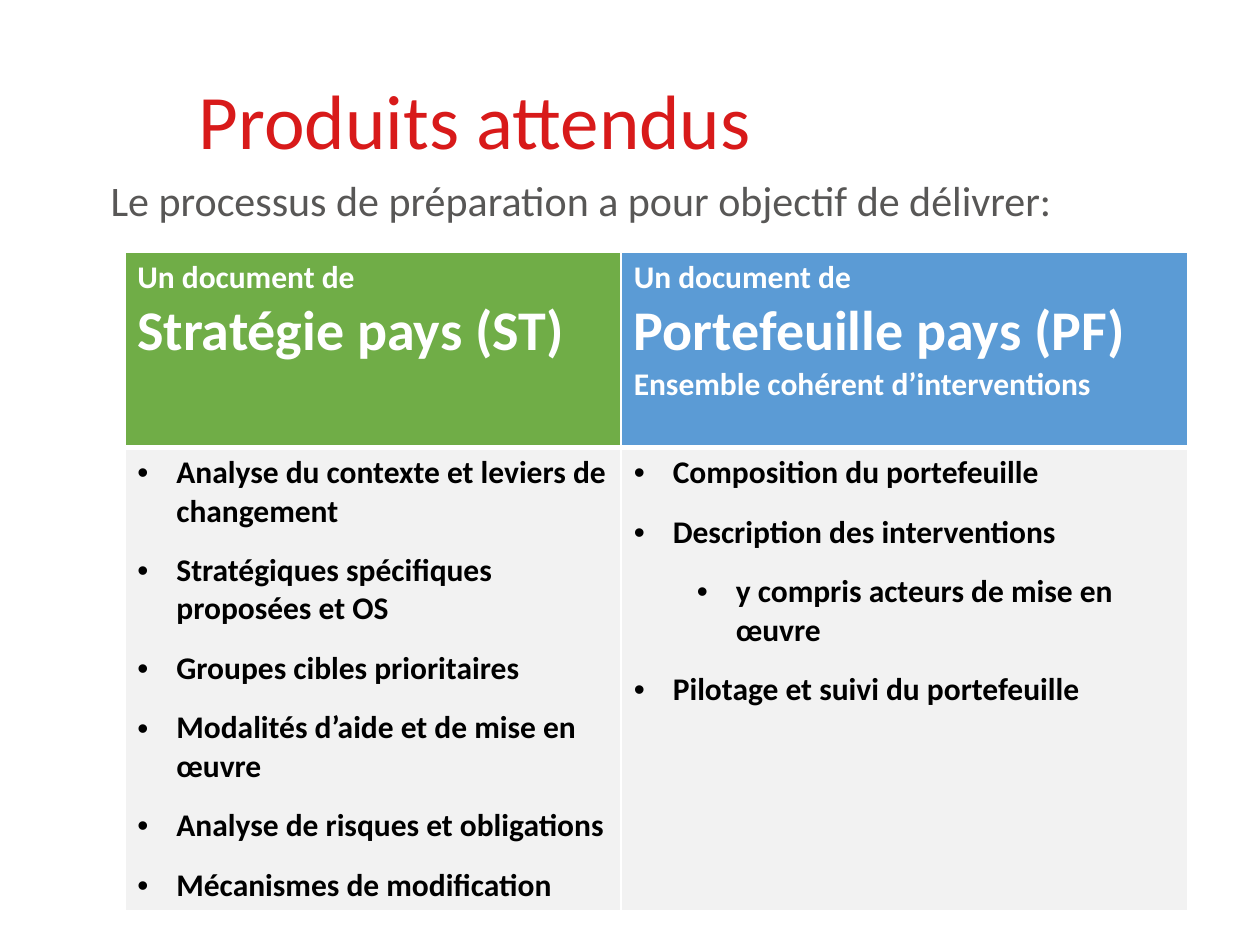
from dataclasses import dataclass

from lxml import etree
from pptx import Presentation
from pptx.dml.color import RGBColor
from pptx.enum.text import MSO_ANCHOR
from pptx.oxml.ns import qn
from pptx.util import Inches, Pt

TOP, MIDDLE = MSO_ANCHOR.TOP, MSO_ANCHOR.MIDDLE


@dataclass(frozen=True)
class Theme:
    font: str = "Calibri"
    red: str = "D81A1A"
    grey: str = "585756"
    green: str = "70AD47"
    blue: str = "5B9BD5"
    pale: str = "F2F2F2"
    white: str = "FFFFFF"
    black: str = "000000"
    title: int = 44
    intro: int = 24
    heading: int = 32
    body: int = 18


THEME = Theme()


def write(frame, text, size=THEME.body, color=THEME.black, bold=False,
          first=False, line=None, gap=0, bullet_level=None):
    """Add one paragraph; bullet_level 0 or 1 makes it a list item."""
    para = frame.paragraphs[0] if first else frame.add_paragraph()
    if bullet_level is not None:
        para.level = bullet_level
        props = para._p.get_or_add_pPr()
        props.set("marL", str(Inches(0.31 + 0.5 * bullet_level)))
        props.set("indent", str(Inches(-0.31)))
        etree.SubElement(props, qn("a:buFont")).set("typeface", "Arial")
        etree.SubElement(props, qn("a:buChar")).set("char", "•")
    if line:
        para.line_spacing = line
    if gap:
        para.space_after = Pt(gap)
        if not first:
            para.space_before = Pt(gap)
    run = para.add_run()
    run.text = text
    run.font.name = THEME.font
    run.font.size = Pt(size)
    run.font.bold = bold
    run.font.color.rgb = RGBColor.from_string(color)


def style_cell(cell, fill, top, bottom):
    """Fill a cell and give it white borders, widths in points."""
    cell.fill.solid()
    cell.fill.fore_color.rgb = RGBColor.from_string(fill)
    props = cell._tc.get_or_add_tcPr()
    widths = {"lnL": 1, "lnR": 1, "lnT": top, "lnB": bottom}
    for place, (side, width) in enumerate(widths.items()):
        border = etree.Element(qn(f"a:{side}"), w=str(Pt(width)))
        solid = etree.SubElement(border, qn("a:solidFill"))
        etree.SubElement(solid, qn("a:srgbClr"), val=THEME.white)
        props.insert(place, border)


prs = Presentation()
prs.slide_width, prs.slide_height = Inches(10), Inches(7.5)
slide = prs.slides.add_slide(prs.slide_layouts[6])

# Title and introduction
lines = [
    ((1.48, 0.38, 7.08, 1.22), MIDDLE, "Produits attendus", THEME.title, THEME.red),
    ((0.78, 1.38, 8.83, 0.58), TOP,
     "Le processus de préparation a pour objectif de délivrer:", THEME.intro, THEME.grey),
]
for place, anchor, text, size, color in lines:
    frame = slide.shapes.add_textbox(*map(Inches, place)).text_frame
    frame.word_wrap = True
    frame.vertical_anchor = anchor
    write(frame, text, size=size, color=color, first=True, line=0.9)

# Table: one column per expected document
documents = [
    (3.94, THEME.green,
     [("Un document de", THEME.body), ("Stratégie pays (ST)", THEME.heading)],
     [("Analyse du contexte et leviers de changement", 0),
      ("Stratégiques spécifiques proposées et OS", 0),
      ("Groupes cibles prioritaires", 0),
      ("Modalités d’aide et de mise en œuvre", 0),
      ("Analyse de risques et obligations", 0),
      ("Mécanismes de modification", 0)]),
    (4.5, THEME.blue,
     [("Un document de", THEME.body), ("Portefeuille pays (PF)", THEME.heading),
      ("Ensemble cohérent d’interventions", THEME.body)],
     [("Composition du portefeuille", 0),
      ("Description des interventions", 0),
      ("y compris acteurs de mise en œuvre", 1),
      ("Pilotage et suivi du portefeuille", 0)]),
]
row_heights = [1.55, 3.68]
table = slide.shapes.add_table(
    2, 2, Inches(0.99), Inches(2), Inches(8.44), Inches(sum(row_heights))).table
for row, height in zip(table.rows, row_heights):
    row.height = Inches(height)

for col, (width, color, heading, items) in enumerate(documents):
    table.columns[col].width = Inches(width)
    header, content = table.cell(0, col), table.cell(1, col)
    style_cell(header, color, top=1, bottom=3)
    style_cell(content, THEME.pale, top=3, bottom=1)
    for i, (text, size) in enumerate(heading):
        write(header.text_frame, text, size=size, color=THEME.white,
              bold=True, first=i == 0)
    for i, (text, level) in enumerate(items):
        write(content.text_frame, text, bold=True, first=i == 0,
              gap=6, bullet_level=level)

prs.save("out.pptx")
